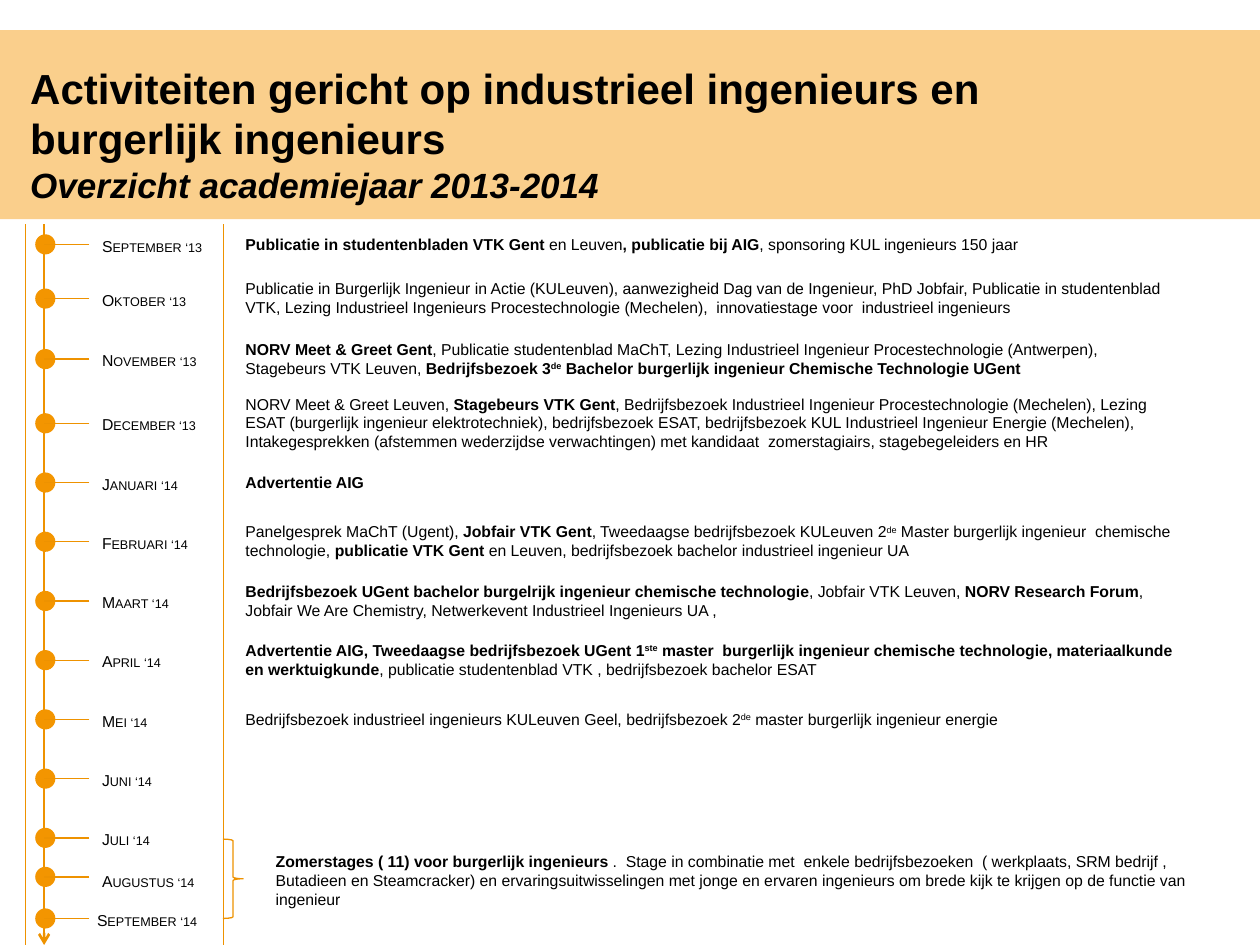
from pptx import Presentation, util as u
from pptx.dml.color import RGBColor
from pptx.enum import dml, shapes, text
from pptx.oxml import parse_xml
from pptx.oxml.ns import nsdecls

W, H = 10, 7.5
ORANGE, DOT, BAND = "EE9200", "F39500", "FACF8C"
AXIS, TICK, DIA = 0.35, 0.71, 0.16
LEFT, RIGHT, TOP = 0.2, 1.77, 1.78
STEP = 0.47

# In the texts, *...* is bold and ^...^ is superscript.
EARLY = [
    (1.86, "September ‘13",
     "*Publicatie in studentenbladen VTK Gent *en Leuven*, publicatie bij AIG*, "
     "sponsoring KUL ingenieurs 150 jaar"),
    (2.29, "Oktober ‘13",
     "Publicatie in Burgerlijk Ingenieur in Actie (KULeuven), aanwezigheid Dag van de "
     "Ingenieur, PhD Jobfair, Publicatie in studentenblad VTK, Lezing Industrieel "
     "Ingenieurs Procestechnologie (Mechelen),  innovatiestage voor  industrieel ingenieurs"),
    (2.77, "November ‘13",
     "*NORV Meet & Greet Gent*, Publicatie studentenblad MaChT, Lezing Industrieel "
     "Ingenieur Procestechnologie (Antwerpen), Stagebeurs VTK Leuven, *Bedrijfsbezoek "
     "3^de^ Bachelor burgerlijk ingenieur Chemische Technologie UGent*"),
]
REGULAR = [
    ("December ‘13",
     "NORV Meet & Greet Leuven, *Stagebeurs VTK Gent*, Bedrijfsbezoek Industrieel "
     "Ingenieur Procestechnologie (Mechelen), Lezing ESAT (burgerlijk ingenieur "
     "elektrotechniek), bedrijfsbezoek ESAT, bedrijfsbezoek KUL Industrieel Ingenieur "
     "Energie (Mechelen), Intakegesprekken (afstemmen wederzijdse verwachtingen) met "
     "kandidaat  zomerstagiairs, stagebegeleiders en HR"),
    ("Januari ‘14", "*Advertentie AIG*"),
    ("Februari ‘14",
     "Panelgesprek MaChT (Ugent), *Jobfair VTK Gent*, Tweedaagse bedrijfsbezoek KULeuven "
     "2^de^ Master burgerlijk ingenieur  chemische technologie, *publicatie VTK Gent* en "
     "Leuven, bedrijfsbezoek bachelor industrieel ingenieur UA"),
    ("Maart ‘14",
     "*Bedrijfsbezoek UGent bachelor burgelrijk ingenieur chemische technologie*, Jobfair "
     "VTK Leuven, *NORV Research Forum*, Jobfair We Are Chemistry, Netwerkevent "
     "Industrieel Ingenieurs UA ,"),
    ("April ‘14",
     "*Advertentie AIG, Tweedaagse bedrijfsbezoek UGent 1^ste^ master  burgerlijk ingenieur "
     "chemische technologie, materiaalkunde en werktuigkunde*, publicatie studentenblad "
     "VTK , bedrijfsbezoek bachelor ESAT"),
    ("Mei ‘14",
     "Bedrijfsbezoek industrieel ingenieurs KULeuven Geel, bedrijfsbezoek 2^de^ master "
     "burgerlijk ingenieur energie"),
    ("Juni ‘14", ""),
    ("Juli ‘14", ""),
]
SUMMER = ("*Zomerstages ( 11) voor burgerlijk ingenieurs *.  Stage in combinatie met  enkele "
          "bedrijfsbezoeken  ( werkplaats, SRM bedrijf , Butadieen en Steamcracker) en "
          "ervaringsuitwisselingen met jonge en ervaren ingenieurs om brede kijk te krijgen "
          "op de functie van ingenieur")


def color(code):
    return RGBColor.from_string(code)


def box(x, y, w, h):
    return [u.Inches(v) for v in (x, y, w, h)]


def shape(tree, kind, area, fill=None, line=None):
    item = tree.add_shape(kind, *box(*area))
    item.shadow.inherit = False
    if fill:
        item.fill.solid()
        item.fill.fore_color.rgb = color(fill)
    else:
        item.fill.background()
    if line:
        item.line.color.rgb = color(line)
        item.line.width = u.Pt(0.75)
    else:
        item.line.fill.background()


def rule(tree, start, end, width, dots=False, arrow=False):
    item = tree.add_connector(shapes.MSO_CONNECTOR.STRAIGHT, *box(*start, *end))
    item.line.color.rgb = color(ORANGE)
    item.line.width = u.Pt(width)
    if dots:
        item.line.dash_style = dml.MSO_LINE.ROUND_DOT
    if arrow:
        item.line._get_or_add_ln().append(
            parse_xml(f'<a:tailEnd {nsdecls("a")} type="arrow"/>'))
    item._element.spPr.append(parse_xml(f'<a:effectLst {nsdecls("a")}/>'))


def frame(tree, area, anchor, inset=True):
    body = tree.add_textbox(*box(*area)).text_frame
    body.word_wrap = True
    body.vertical_anchor = anchor
    if not inset:
        body.margin_left = body.margin_right = body.margin_top = body.margin_bottom = 0
    return body.paragraphs[0]


def run(para, words, size=9, bold=False, italic=False):
    part = para.add_run()
    part.text = words
    font = part.font
    font.name, font.size = "Arial", u.Pt(size)
    font.bold, font.italic = bold, italic
    font.color.rgb = color("000000")
    return part.font._element


def title(tree):
    para = frame(tree, (0.24, 0.7, 7.8, 0.93), text.MSO_ANCHOR.BOTTOM, False)
    run(para, "Activiteiten gericht op industrieel ingenieurs en burgerlijk ingenieurs", 24, True)
    para.add_line_break()
    run(para, "Overzicht academiejaar 2013-2014", 20, True, True)


def label(tree, x, y, words):
    para = frame(tree, (x, y, 0.98, 0.32), text.MSO_ANCHOR.TOP, False)
    para.line_spacing = 1.1
    para._p.get_or_add_pPr().set("marL", str(u.Inches(0.1)))
    run(para, words).set("cap", "small")


def note(tree, x, y, words, h=0.37):
    """Add a text, turning its * and ^ marks into bold and superscript runs."""
    para = frame(tree, (x, y, 7.56, h), text.MSO_ANCHOR.MIDDLE)
    for i, part in enumerate(words.split("*")):
        for j, piece in enumerate(part.split("^")):
            if piece:
                props = run(para, piece, bold=i % 2 == 1)
                if j % 2:
                    props.set("baseline", "30000")


def mark(tree, y):
    group = tree.add_group_shape().shapes
    shape(group, shapes.MSO_SHAPE.OVAL, (AXIS - DIA / 2 + 0.01, y, DIA, DIA), DOT)
    mid = y + DIA / 2
    rule(group, (TICK, mid), (AXIS, mid), 0.75)


def main():
    deck = Presentation()
    deck.slide_width, deck.slide_height = u.Inches(W), u.Inches(H)
    tree = deck.slides.add_slide(deck.slide_layouts[6]).shapes

    shape(tree, shapes.MSO_SHAPE.RECTANGLE, (0, 0.24, W, H / 5), BAND)
    title(tree)
    rule(tree, (AXIS, TOP), (AXIS, H), 1.5, arrow=True)
    for x in (LEFT, RIGHT):
        rule(tree, (x, TOP), (x, H), 0.25, dots=True)

    rows = EARLY + [(3.28 + i * STEP, *row) for i, row in enumerate(REGULAR)]
    for y, month, words in rows:
        mark(tree, y)
        label(tree, TICK, y, month)
        if words:
            note(tree, 1.85, y - 0.11, words)

    for y, x, top, month in ((6.88, TICK, 6.9, "Augustus ‘14"),
                             (7.21, 0.67, 7.21, "September ‘14")):
        mark(tree, y)
        label(tree, x, top, month)
    shape(tree, shapes.MSO_SHAPE.RIGHT_BRACE, (RIGHT, 6.66, DIA, 0.63), line=ORANGE)
    note(tree, 2.09, 6.76, SUMMER, 0.45)

    deck.save("out.pptx")


if __name__ == "__main__":
    main()
